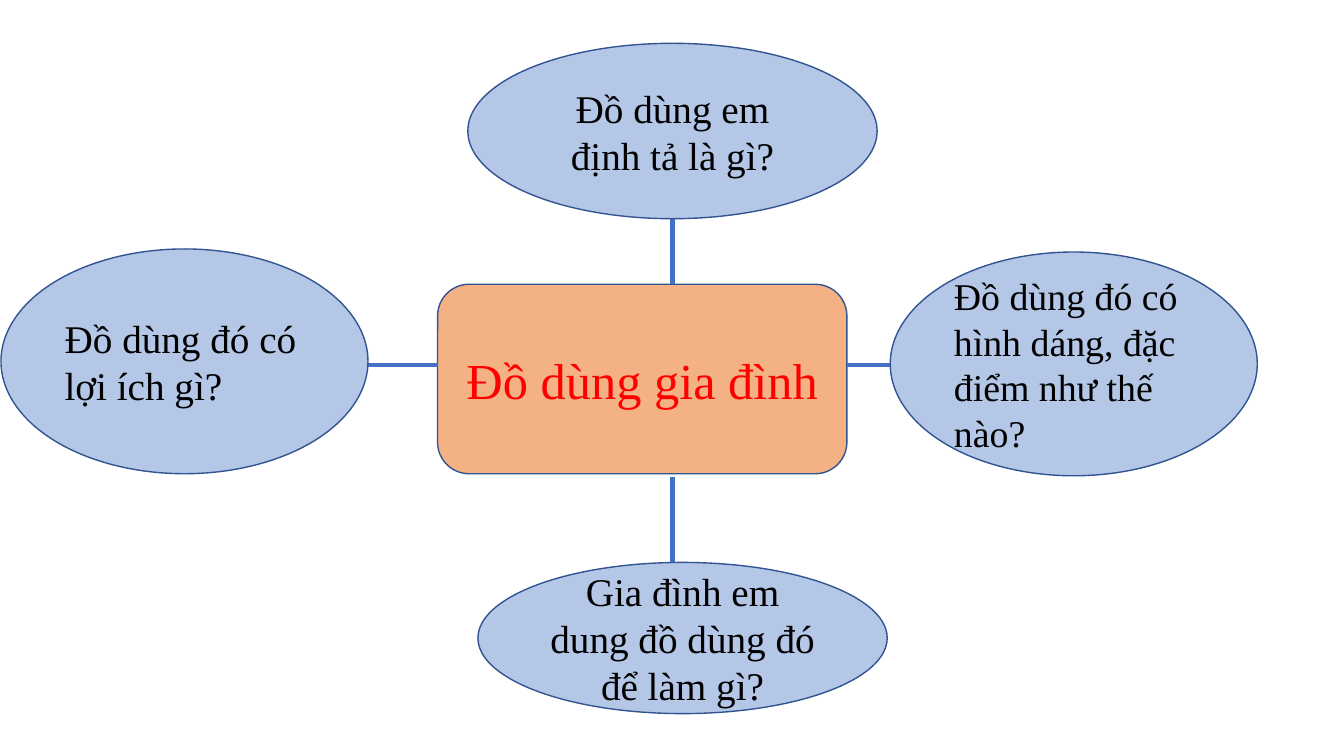
from pptx import Presentation
from pptx.dml.color import RGBColor
from pptx.enum.shapes import MSO_CONNECTOR, MSO_SHAPE
from pptx.enum.text import MSO_ANCHOR, PP_ALIGN
from pptx.oxml.ns import qn
from pptx.util import Inches, Pt
from lxml import etree


def color(value):
    return RGBColor.from_string(value)


def add_node(slide, kind, box, fill, text, size, text_color, align):
    shape = slide.shapes.add_shape(kind, *map(Inches, box))
    shape.shadow.inherit = False
    shape.fill.solid()
    shape.fill.fore_color.rgb = color(fill)
    shape.line.color.rgb = color("325491")
    shape.line.width = Pt(1)
    frame = shape.text_frame
    frame.word_wrap = True
    frame.vertical_anchor = MSO_ANCHOR.MIDDLE
    paragraph = frame.paragraphs[0]
    paragraph.text = text
    paragraph.alignment = align
    paragraph.font.name = "Times New Roman"
    paragraph.font.size = Pt(size)
    paragraph.font.color.rgb = color(text_color)


presentation = Presentation()
presentation.slide_width = Inches(13.33)
presentation.slide_height = Inches(7.5)
slide = presentation.slides.add_slide(presentation.slide_layouts[6])

# Central topic
add_node(slide, MSO_SHAPE.ROUNDED_RECTANGLE, (4.34, 2.82, 4.06, 1.88),
         "F4B183", "Đồ dùng gia đình", 36, "FF0000", PP_ALIGN.CENTER)

# Spokes: one vertical and one horizontal axis through the topic
axis_x, axis_y = 6.67, 3.62
spokes = [
    (axis_x, 2.82, axis_x, 1.95),
    (8.4, axis_y, 9.63, axis_y),
    (axis_x, 5.58, axis_x, 4.73),
    (3.11, axis_y, 4.34, axis_y),
]
for ends in spokes:
    connector = slide.shapes.add_connector(MSO_CONNECTOR.STRAIGHT, *map(Inches, ends))
    connector.line.color.rgb = color("4472C4")
    connector.line.width = Pt(3)
    etree.SubElement(connector._element.spPr, qn("a:effectLst"))

# Questions around the topic, clockwise from the top
questions = [
    ((4.64, 0.43, 4.06, 1.74), "Đồ dùng em định tả là gì?", 28, PP_ALIGN.CENTER),
    ((8.83, 2.5, 3.64, 2.22), "Đồ dùng đó có hình dáng, đặc điểm như thế nào?", 27, PP_ALIGN.LEFT),
    ((4.74, 5.58, 4.06, 1.5), "Gia đình em dung đồ dùng đó để làm gì?", 28, PP_ALIGN.CENTER),
    ((0.01, 2.47, 3.64, 2.23), "Đồ dùng đó có lợi ích gì?", 28, PP_ALIGN.LEFT),
]
for box, text, size, align in questions:
    add_node(slide, MSO_SHAPE.OVAL, box, "B4C7E7", text, size, "000000", align)

presentation.save("out.pptx")
